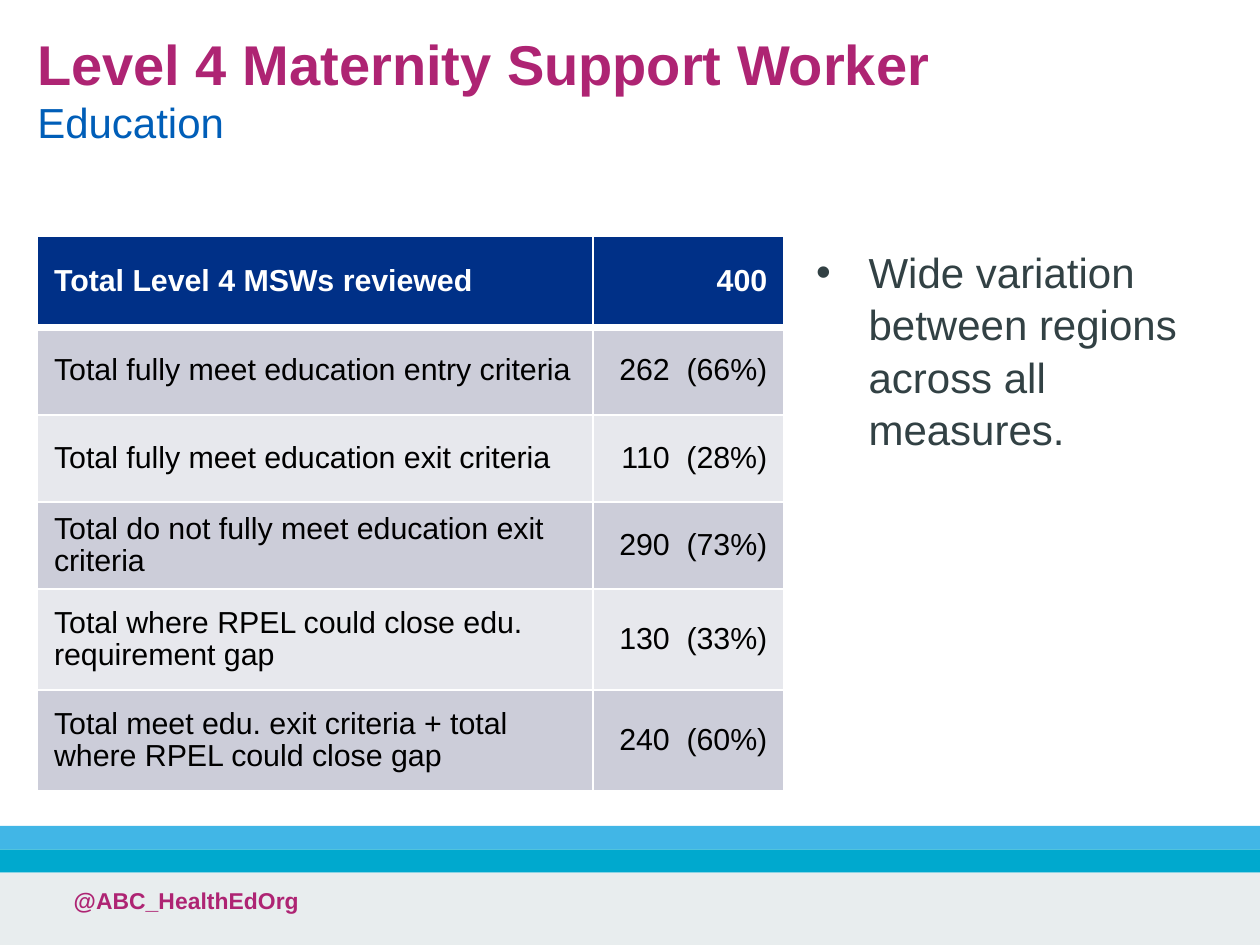
from lxml import etree
from pptx import Presentation
from pptx.dml.color import RGBColor
from pptx.enum.shapes import MSO_SHAPE
from pptx.enum.text import MSO_ANCHOR, PP_ALIGN
from pptx.oxml.ns import qn
from pptx.util import Pt

RECTANGLE = MSO_SHAPE.RECTANGLE
MIDDLE = MSO_ANCHOR.MIDDLE
LEFT, RIGHT = PP_ALIGN.LEFT, PP_ALIGN.RIGHT

WHITE = RGBColor(0xFF, 0xFF, 0xFF)
BLACK = RGBColor(0, 0, 0)
PINK = RGBColor(0xAE, 0x24, 0x73)
BLUE = RGBColor(0x00, 0x5E, 0xB8)
NAVY = RGBColor(0x00, 0x30, 0x87)
SLATE = RGBColor(0x32, 0x41, 0x44)
SKY = RGBColor(0x41, 0xB6, 0xE6)
AQUA = RGBColor(0x00, 0xA9, 0xCE)
PALE_GREY = RGBColor(0xE8, 0xED, 0xEE)
ROW_FILLS = (RGBColor(0xCC, 0xCD, 0xD9), RGBColor(0xE7, 0xE8, 0xED))

FONT = "Arial"
SLIDE_WIDTH, SLIDE_HEIGHT = 540, 405
MARGIN = 16

TITLE = "Level 4 Maternity Support Worker"
SUBTITLE = "Education"
HANDLE = "@ABC_HealthEdOrg"
FINDING = "Wide variation between regions across all measures."
MEASURES = [
    ("Total Level 4 MSWs reviewed", "400"),
    ("Total fully meet education entry criteria", "262\u00a0 (66%)"),
    ("Total fully meet education exit criteria", "110  (28%)"),
    ("Total do not fully meet education exit criteria", "290  (73%)"),
    ("Total where RPEL could close edu. requirement gap", "130  (33%)"),
    ("Total meet edu. exit criteria + total where RPEL could close gap", "240  (60%)"),
]
COLUMN_WIDTHS = (238.1, 81.9)
ROW_HEIGHTS = (39.2, 37.4, 37.4, 37.4, 43.2, 43.2)
TABLE_TOP = 101.2
BANDS = [(354, 10, SKY), (364, 10, AQUA), (374, 31, PALE_GREY)]  # top, height, colour


def add_run(paragraph, text, size, color, bold=False):
    run = paragraph.add_run()
    run.text = text
    run.font.name = FONT
    run.font.size = Pt(size)
    run.font.bold = bold
    run.font.color.rgb = color


def add_text_frame(slide, left, top, width, height):
    frame = slide.shapes.add_textbox(Pt(left), Pt(top), Pt(width), Pt(height)).text_frame
    frame.word_wrap = True
    return frame


def add_border(cell, side, width):
    """Draw a white line on one side (L, R, T or B) of a cell."""
    properties = cell._tc.get_or_add_tcPr()
    line = etree.SubElement(properties, qn(f"a:ln{side}"), w=str(Pt(width)))
    fill = etree.SubElement(line, qn("a:solidFill"))
    etree.SubElement(fill, qn("a:srgbClr"), val=str(WHITE))


def add_bands(slide):
    for top, height, color in BANDS:
        band = slide.shapes.add_shape(RECTANGLE, 0, Pt(top), Pt(SLIDE_WIDTH), Pt(height))
        band.shadow.inherit = False
        band.fill.solid()
        band.fill.fore_color.rgb = color
        band.line.fill.background()
    handle = add_text_frame(slide, 24.5, 376.6, 315, 28.4)
    add_run(handle.paragraphs[0], HANDLE, 9.8, PINK, True)


def add_heading(slide):
    heading = add_text_frame(slide, MARGIN, 10, 483, 58.5)
    heading.margin_left = heading.margin_right = heading.margin_bottom = 0
    heading.margin_top = Pt(2.5)
    add_run(heading.paragraphs[0], TITLE, 24, PINK, True)
    add_run(heading.add_paragraph(), SUBTITLE, 18, BLUE)


def add_measures(slide):
    table = slide.shapes.add_table(
        len(MEASURES), len(COLUMN_WIDTHS), Pt(MARGIN), Pt(TABLE_TOP),
        Pt(sum(COLUMN_WIDTHS)), Pt(sum(ROW_HEIGHTS))).table
    table.horz_banding = False
    for column, width in zip(table.columns, COLUMN_WIDTHS):
        column.width = Pt(width)
    for r, (measure, height) in enumerate(zip(MEASURES, ROW_HEIGHTS)):
        table.rows[r].height = Pt(height)
        header = r == 0
        for c, (text, alignment) in enumerate(zip(measure, (LEFT, RIGHT))):
            cell = table.cell(r, c)
            cell.vertical_anchor = MIDDLE
            for side in "LRTB":
                heavy = (r, side) in ((0, "B"), (1, "T"))
                add_border(cell, side, 3 if heavy else 1)
            cell.fill.solid()
            cell.fill.fore_color.rgb = NAVY if header else ROW_FILLS[(r - 1) % 2]
            paragraph = cell.text_frame.paragraphs[0]
            paragraph.alignment = alignment
            paragraph.line_spacing = 0.95
            add_run(paragraph, text, 13, WHITE if header else BLACK, header)


def add_finding(slide):
    paragraph = add_text_frame(slide, 342.7, TABLE_TOP, 192.2, 94.3).paragraphs[0]
    paragraph.line_spacing = 1.04
    properties = paragraph._p.get_or_add_pPr()
    properties.set("marL", str(Pt(22.5)))
    properties.set("indent", str(-Pt(22.5)))
    etree.SubElement(properties, qn("a:buFont"), typeface=FONT)
    etree.SubElement(properties, qn("a:buChar"), char="•")
    add_run(paragraph, FINDING, 18, SLATE)


def main():
    presentation = Presentation()
    presentation.slide_width = Pt(SLIDE_WIDTH)
    presentation.slide_height = Pt(SLIDE_HEIGHT)
    slide = presentation.slides.add_slide(presentation.slide_layouts[6])
    add_bands(slide)
    add_heading(slide)
    add_measures(slide)
    add_finding(slide)
    presentation.save("out.pptx")


if __name__ == "__main__":
    main()
